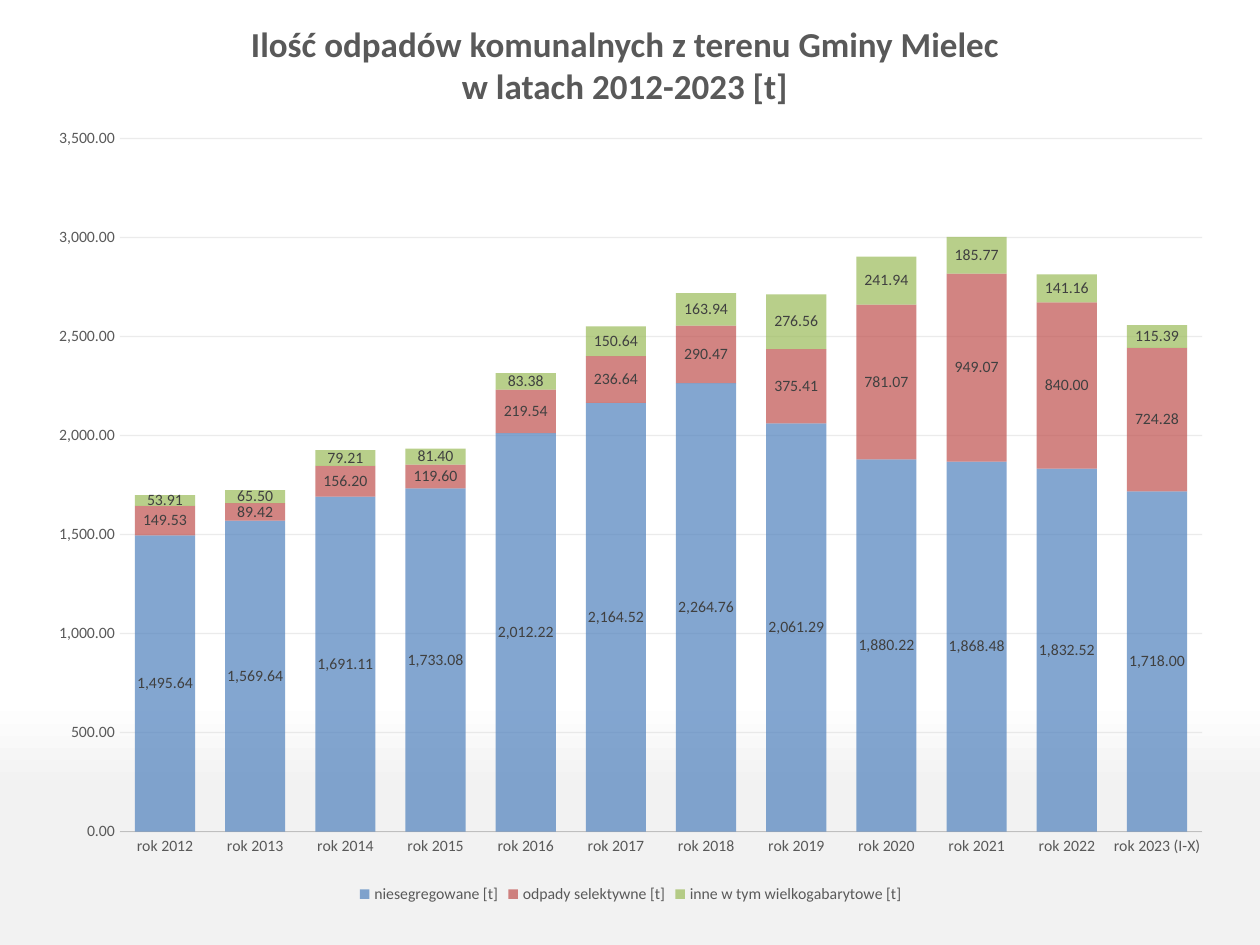
import pptx
import pptx.chart.data
import pptx.dml.color
import pptx.enum.chart
import pptx.enum.text
import pptx.oxml
import pptx.oxml.ns
import pptx.util
from pptx.util import Inches

COLORS = {
    "title": "595959", "axis_text": "595959", "label": "404040", "text": "000000",
    "axis_line": "BFBFBF", "grid": "D9D9D9", "white": "FFFFFF", "grey": "F2F2F2",
    "mixed": "4F81BD", "selective": "C0504D", "other": "9BBB59",
}
NUMBER_FORMAT = "#,##0.00"
YEARS = [f"rok {year}" for year in range(2012, 2023)] + ["rok 2023 (I-X)"]
WASTE = [
    ("niesegregowane [t]", "mixed",
     [1495.64, 1569.64, 1691.11, 1733.08, 2012.22, 2164.52,
      2264.76, 2061.29, 1880.22, 1868.48, 1832.52, 1718]),
    ("odpady selektywne [t]", "selective",
     [149.53, 89.42, 156.2, 119.6, 219.54, 236.64,
      290.47, 375.41, 781.07, 949.07, 840, 724.28]),
    ("inne w tym wielkogabarytowe [t]", "other",
     [53.91, 65.5, 79.21, 81.4, 83.38, 150.64,
      163.94, 276.56, 241.94, 185.77, 141.16, 115.39]),
]


class SlideBuilder:
    """Holds the style and the current slide, and adds elements to it."""

    font_name = "Calibri"

    def __init__(self, presentation):
        self.slide = presentation.slides.add_slide(presentation.slide_layouts[6])

    def color(self, name):
        return pptx.dml.color.RGBColor.from_string(COLORS[name])

    def style_font(self, font, size, color, bold=False):
        font.name = self.font_name
        font.size = pptx.util.Pt(size)
        font.bold = bold
        font.color.rgb = self.color(color)

    def fill_solid(self, fill, color, opacity=100):
        fill.solid()
        fill.fore_color.rgb = self.color(color)
        if opacity < 100:
            element = fill._xPr.find(".//" + pptx.oxml.ns.qn("a:srgbClr"))
            alpha = pptx.oxml.parse_xml(
                f'<a:alpha {pptx.oxml.ns.nsdecls("a")} val="{opacity * 1000}"/>')
            element.append(alpha)

    def style_line(self, line, color, opacity=100):
        line.width = pptx.util.Pt(0.75)
        self.fill_solid(line.fill, color, opacity)

    def background(self, stops):
        fill = self.slide.background.fill
        fill.gradient()
        fill.gradient_angle = 270
        stop_list = self.slide.element.find(".//" + pptx.oxml.ns.qn("a:gsLst"))
        for stop in list(stop_list):
            stop_list.remove(stop)
        for position, color in stops:
            stop_list.append(pptx.oxml.parse_xml(
                f'<a:gs {pptx.oxml.ns.nsdecls("a")} pos="{position * 1000}">'
                f'<a:srgbClr val="{COLORS[color]}"/></a:gs>'))

    def title(self, text, left, top, width, height):
        shape = self.slide.shapes.add_textbox(
            Inches(left), Inches(top), Inches(width), Inches(height))
        frame = shape.text_frame
        frame.word_wrap = True
        frame.auto_size = pptx.enum.text.MSO_AUTO_SIZE.SHAPE_TO_FIT_TEXT
        paragraph = frame.paragraphs[0]
        paragraph.alignment = pptx.enum.text.PP_ALIGN.CENTER
        run = paragraph.add_run()
        run.text = text
        self.style_font(run.font, 20, "title", bold=True)

    def stacked_chart(self, categories, series_rows, left, top, width, height):
        data = pptx.chart.data.CategoryChartData(number_format=NUMBER_FORMAT)
        data.categories = categories
        for name, _, values in series_rows:
            data.add_series(name, values)
        chart = self.slide.shapes.add_chart(
            pptx.enum.chart.XL_CHART_TYPE.COLUMN_STACKED,
            Inches(left), Inches(top), Inches(width), Inches(height), data).chart
        self.style_font(chart.font, 10, "text")
        chart.has_title = False
        chart.has_legend = True
        chart.legend.position = pptx.enum.chart.XL_LEGEND_POSITION.BOTTOM
        chart.legend.include_in_layout = False
        self.style_font(chart.legend.font, 9, "axis_text")
        plot = chart.plots[0]
        plot.gap_width = 50
        plot.overlap = 100
        plot.vary_by_categories = False
        for series, (_, color, _) in zip(plot.series, series_rows):
            self.fill_solid(series.format.fill, color, 70)
            self.series_labels(series.data_labels)
        self.axes(chart)

    def series_labels(self, labels):
        labels.show_value = True
        labels.position = pptx.enum.chart.XL_LABEL_POSITION.CENTER
        labels.number_format = NUMBER_FORMAT
        labels.number_format_is_linked = False
        self.style_font(labels.font, 9, "label")

    def axes(self, chart):
        for axis in (chart.category_axis, chart.value_axis):
            axis.major_tick_mark = pptx.enum.chart.XL_TICK_MARK.NONE
            axis.minor_tick_mark = pptx.enum.chart.XL_TICK_MARK.NONE
            self.style_font(axis.tick_labels.font, 9, "axis_text")
        self.style_line(chart.category_axis.format.line, "axis_line")
        value_axis = chart.value_axis
        value_axis.minimum_scale = 0
        value_axis.maximum_scale = 3500
        value_axis.major_unit = 500
        value_axis.format.line.fill.background()
        value_axis.tick_labels.number_format = NUMBER_FORMAT
        value_axis.tick_labels.number_format_is_linked = False
        self.style_line(value_axis.major_gridlines.format.line, "grid", 50)


def main():
    presentation = pptx.Presentation()
    presentation.slide_width = Inches(10)
    presentation.slide_height = Inches(7.5)
    builder = SlideBuilder(presentation)
    builder.background([(0, "white"), (74, "white"), (83, "grey"), (100, "grey")])
    builder.title("Ilość odpadów komunalnych z terenu Gminy Mielec w latach 2012-2023 [t]",
                  1.77, 0.13, 6.38, 0.77)
    builder.stacked_chart(YEARS, WASTE, 0.28, 0.9, 9.45, 6.31)
    presentation.save("out.pptx")


if __name__ == "__main__":
    main()
